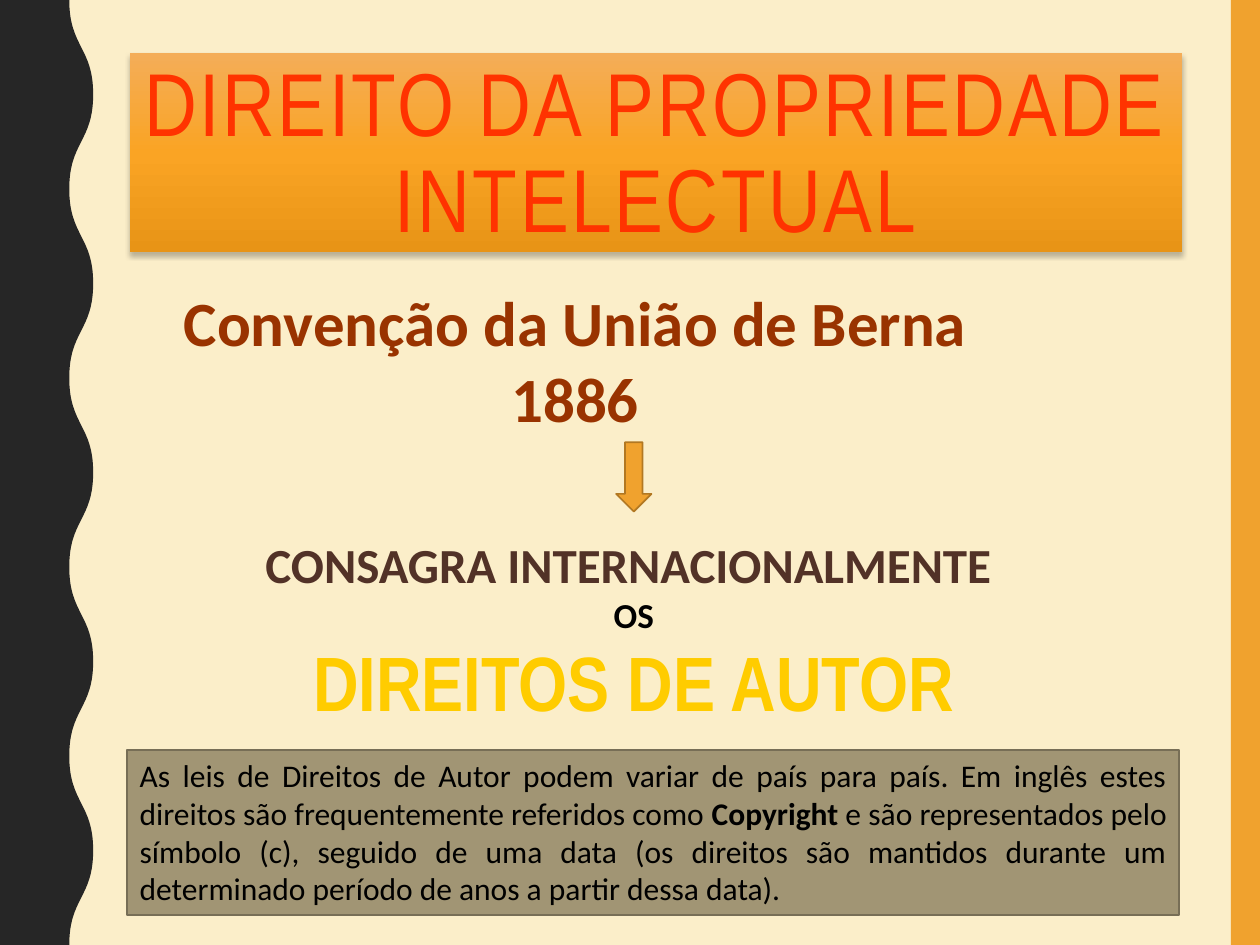
from lxml.etree import SubElement
from pptx import Presentation
from pptx.dml.color import RGBColor
from pptx.enum.shapes import MSO_SHAPE
from pptx.enum.text import MSO_ANCHOR, MSO_AUTO_SIZE, PP_ALIGN
from pptx.oxml.ns import qn
from pptx.util import Inches, Pt

CREAM = RGBColor(0xFB, 0xEE, 0xC9)
CHARCOAL = RGBColor(0x26, 0x26, 0x26)
AMBER = RGBColor(0xF0, 0xA2, 0x2E)
AMBER_EDGE = RGBColor(0xB2, 0x78, 0x22)
TITLE_STOPS = [(0, "F4AD58"), (50, "FAA424"), (100, "E89416")]
RED = RGBColor(0xFF, 0x33, 0x00)
RUST = RGBColor(0x99, 0x33, 0x00)
BROWN = RGBColor(0x52, 0x32, 0x27)
GOLD = RGBColor(0xFF, 0xCC, 0x00)
BLACK = RGBColor(0, 0, 0)
OLIVE = RGBColor(0xA1, 0x95, 0x74)
OLIVE_EDGE = RGBColor(0x77, 0x6E, 0x56)

WIDTH, HEIGHT = 10, 7.5
UNITS = 1000  # freeform units per inch
TITLE = "DIREITO DA PROPRIEDADE INTELECTUAL"
# text, size, font, colour, alignment
CONVENTION = [
    ("Convenção da União de Berna", 36, "Calibri", RUST, PP_ALIGN.LEFT),
    ("1886", 36, "Calibri", RUST, PP_ALIGN.CENTER),
]
RIGHTS = [
    ("CONSAGRA INTERNACIONALMENTE ", 28, "Calibri", BROWN, PP_ALIGN.CENTER),
    ("OS", 20, "Calibri", BLACK, PP_ALIGN.CENTER),
    ("DIREITOS DE AUTOR", 44, "Arial Narrow", GOLD, PP_ALIGN.CENTER),
]
# text, bold
NOTE = [
    ("As leis de Direitos de Autor podem variar de país para país. Em inglês "
     "estes direitos são frequentemente referidos como ", False),
    ("Copyright", True),
    (" e são representados pelo símbolo (c), seguido de uma data (os direitos "
     "são mantidos durante um determinado período de anos a partir dessa data).", False),
]


def box(*lengths):
    return [Inches(v) for v in lengths]


def set_font(font, size, name, color, bold=False):
    font.size, font.name, font.bold = Pt(size), name, bold
    font.color.rgb = color


def paint(sp, fill, edge=None):
    sp.shadow.inherit = False
    sp.fill.solid()
    sp.fill.fore_color.rgb = fill
    if edge is None:
        sp.line.fill.background()
    else:
        sp.line.color.rgb = edge
        sp.line.width = Pt(1)


def add_block(slide, place, fill, edge=None, kind=MSO_SHAPE.RECTANGLE):
    sp = slide.shapes.add_shape(kind, *box(*place))
    paint(sp, fill, edge)
    return sp


def add_wave(slide, trough=0.55, crest=0.74, waves=5):
    """Dark left band whose right edge is a row of S-curves."""
    half = HEIGHT / (2 * waves)
    edge = [(round((crest if i % 2 else trough) * UNITS), round(i * half * UNITS))
            for i in range(2 * waves + 1)]
    builder = slide.shapes.build_freeform(*edge[0], scale=Inches(1) / UNITS)
    builder.add_line_segments(edge[1:] + [(0, round(HEIGHT * UNITS)), (0, 0)], close=True)
    sp = builder.convert_to_shape()
    paint(sp, CHARCOAL)
    # Bend each straight step of the edge into a curve
    lines = list(sp._element.iter(qn("a:lnTo")))
    for line, (x0, y0), (x1, y1) in zip(lines, edge, edge[1:]):
        line.tag = qn("a:cubicBezTo")
        line.remove(line[0])
        middle = (y0 + y1) // 2
        for x, y in [(x0, middle), (x1, middle), (x1, y1)]:
            SubElement(line, qn("a:pt"), x=str(x), y=str(y))


def add_title(slide):
    sp = slide.shapes.title
    sp.left, sp.top, sp.width, sp.height = box(1.03, 0.42, 8.35, 1.58)
    pr = sp._element.spPr
    grad = SubElement(pr, qn("a:gradFill"), rotWithShape="1")
    stops = SubElement(grad, qn("a:gsLst"))
    for pos, color in TITLE_STOPS:
        stop = SubElement(stops, qn("a:gs"), pos=str(pos * 1000))
        SubElement(stop, qn("a:srgbClr"), val=color)
    SubElement(grad, qn("a:lin"), ang="5400000", scaled="0")
    effects = SubElement(pr, qn("a:effectLst"))
    shadow = SubElement(effects, qn("a:outerShdw"), blurRad=str(Pt(3)),
                        dist=str(Pt(2)), dir="5400000", rotWithShape="0")
    color = SubElement(shadow, qn("a:srgbClr"), val="000000")
    SubElement(color, qn("a:alpha"), val="25000")

    tf = sp.text_frame
    tf.auto_size, tf.word_wrap = MSO_AUTO_SIZE.NONE, True
    tf.vertical_anchor, tf.margin_top = MSO_ANCHOR.MIDDLE, Inches(0.1)
    p = tf.paragraphs[0]
    p.alignment, p.line_spacing = PP_ALIGN.CENTER, 0.9
    for i, word in enumerate(TITLE.split()):
        if i:
            add_title_run(p, " ", 44, "Roboto Condensed", True)
        add_title_run(p, word, 51, "Arial Narrow", False)


def add_title_run(p, text, size, name, bold):
    r = p.add_run()
    r.text = text
    set_font(r.font, size, name, RED, bold)
    r._r.get_or_add_rPr().set("spc", "150")


def add_lines(slide, place, lines):
    tf = slide.shapes.add_textbox(*box(*place)).text_frame
    tf.word_wrap, tf.auto_size = False, MSO_AUTO_SIZE.SHAPE_TO_FIT_TEXT
    for i, (text, size, name, color, align) in enumerate(lines):
        p = tf.add_paragraph() if i else tf.paragraphs[0]
        p.text, p.alignment = text, align
        set_font(p.font, size, name, color, True)


def add_note(slide):
    tf = add_block(slide, (1.01, 5.95, 8.35, 1.31), OLIVE, OLIVE_EDGE).text_frame
    tf.word_wrap, tf.auto_size = True, MSO_AUTO_SIZE.SHAPE_TO_FIT_TEXT
    tf.vertical_anchor = MSO_ANCHOR.TOP
    p = tf.paragraphs[0]
    p.alignment = PP_ALIGN.JUSTIFY
    set_font(p.font, 18, "Calibri", BLACK)
    for text, bold in NOTE:
        r = p.add_run()
        r.text, r.font.bold = text, bold


def main():
    prs = Presentation()
    prs.slide_width, prs.slide_height = box(WIDTH, HEIGHT)
    slide = prs.slides.add_slide(prs.slide_layouts[5])
    slide.background.fill.solid()
    slide.background.fill.fore_color.rgb = CREAM
    add_block(slide, (9.77, 0, 0.23, HEIGHT), AMBER)
    add_wave(slide)
    add_title(slide)
    add_block(slide, (4.89, 3.51, 0.28, 0.55), AMBER, AMBER_EDGE, MSO_SHAPE.DOWN_ARROW)
    add_lines(slide, (1.12, 4.19, 7.82, 1.65), RIGHTS)
    add_lines(slide, (1.36, 2.2, 7.34, 1.31), CONVENTION)
    add_note(slide)
    prs.save("out.pptx")


if __name__ == "__main__":
    main()
